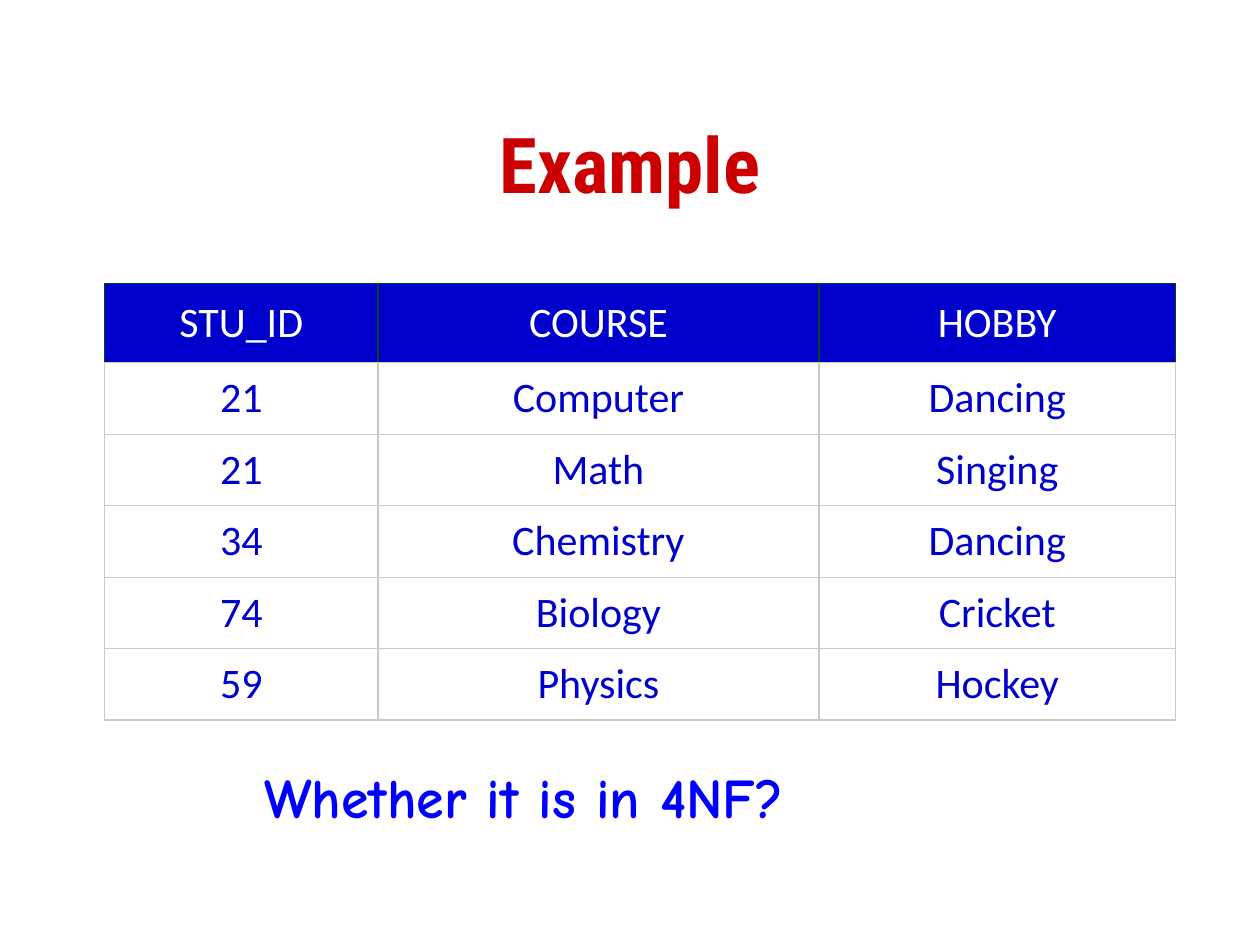
import pptx
import pptx.util
import pptx.dml.color
import pptx.enum.text
import pptx.oxml
import pptx.oxml.ns
from pptx.util import Inches

COLORS = {
    "title": "CC0000",
    "table": "0000CC",
    "question": "0000FF",
    "white": "FFFFFF",
    "grid": "C7CCBE",
    "header_grid": "004221",
}
ROWS = [
    ("STU_ID", "COURSE", "HOBBY"),
    ("21", "Computer", "Dancing"),
    ("21", "Math", "Singing"),
    ("34", "Chemistry", "Dancing"),
    ("74", "Biology", "Cricket"),
    ("59", "Physics", "Hockey"),
]
COLUMN_WIDTHS = (2.17, 3.5, 2.83)
HEADER_HEIGHT, ROW_HEIGHT = 0.63, 0.56
CENTER = pptx.enum.text.PP_ALIGN.CENTER


def rgb(name):
    return pptx.dml.color.RGBColor.from_string(COLORS[name])


def set_attributes(target, values):
    for name, value in values.items():
        setattr(target, name, value)


def write_text(tf, text, font, size, color, bold, align=None):
    p = tf.paragraphs[0]
    p.alignment = align
    p.space_before = pptx.util.Pt(0)
    r = p.add_run()
    r.text = text
    set_attributes(r.font, {"name": font, "size": pptx.util.Pt(size), "bold": bold})
    r.font.color.rgb = rgb(color)


def set_borders(cell, sides):
    tc_pr = cell._tc.get_or_add_tcPr()
    for i, (side, color) in enumerate(sides.items()):
        tc_pr.insert(i, pptx.oxml.parse_xml(
            f'<a:{side} {pptx.oxml.ns.nsdecls("a")} w="{pptx.util.Pt(0.75)}">'
            f'<a:solidFill><a:srgbClr val="{COLORS[color]}"/></a:solidFill></a:{side}>'
        ))


def add_title(s):
    sp = s.shapes.title
    set_attributes(sp, {"left": Inches(0.75), "top": Inches(0.67),
                        "width": Inches(8.5), "height": Inches(1.25)})
    sp.text_frame.vertical_anchor = pptx.enum.text.MSO_ANCHOR.MIDDLE
    write_text(sp.text_frame, "Example", "Roboto Condensed", 44, "title", True, CENTER)


def format_cell(cell, text, is_header):
    margin = Inches(0.11 if is_header else 0.08)
    sides = ("left", "top", "right", "bottom")
    set_attributes(cell, {f"margin_{side}": margin for side in sides})
    cell.fill.solid()
    cell.fill.fore_color.rgb = rgb("table" if is_header else "white")
    line = "header_grid" if is_header else "grid"
    set_borders(cell, {"lnL": line, "lnR": line, "lnT": line, "lnB": "grid"})
    write_text(cell.text_frame, text, "Calibri", 24,
               "white" if is_header else "table", False, CENTER)


def add_hobby_table(s):
    height = HEADER_HEIGHT + ROW_HEIGHT * (len(ROWS) - 1)
    table = s.shapes.add_table(
        len(ROWS), len(COLUMN_WIDTHS), Inches(0.83), Inches(2.25),
        Inches(sum(COLUMN_WIDTHS)), Inches(height)).table
    for column, width in zip(table.columns, COLUMN_WIDTHS):
        column.width = Inches(width)
    for i, values in enumerate(ROWS):
        table.rows[i].height = Inches(ROW_HEIGHT if i else HEADER_HEIGHT)
        for j, text in enumerate(values):
            format_cell(table.cell(i, j), text, i == 0)


def add_question(s):
    sp = s.shapes.add_textbox(Inches(2), Inches(6), Inches(5.1), Inches(0.64))
    tf = sp.text_frame
    set_attributes(tf, {"word_wrap": False,
                        "auto_size": pptx.enum.text.MSO_AUTO_SIZE.SHAPE_TO_FIT_TEXT})
    write_text(tf, "Whether it is in 4NF?", "Comic Neue", 32, "question", True,
               pptx.enum.text.PP_ALIGN.LEFT)


def main():
    prs = pptx.Presentation()
    set_attributes(prs, {"slide_width": Inches(10), "slide_height": Inches(7.5)})
    s = prs.slides.add_slide(prs.slide_layouts[5])
    add_title(s)
    add_hobby_table(s)
    add_question(s)
    prs.save("out.pptx")


if __name__ == "__main__":
    main()
